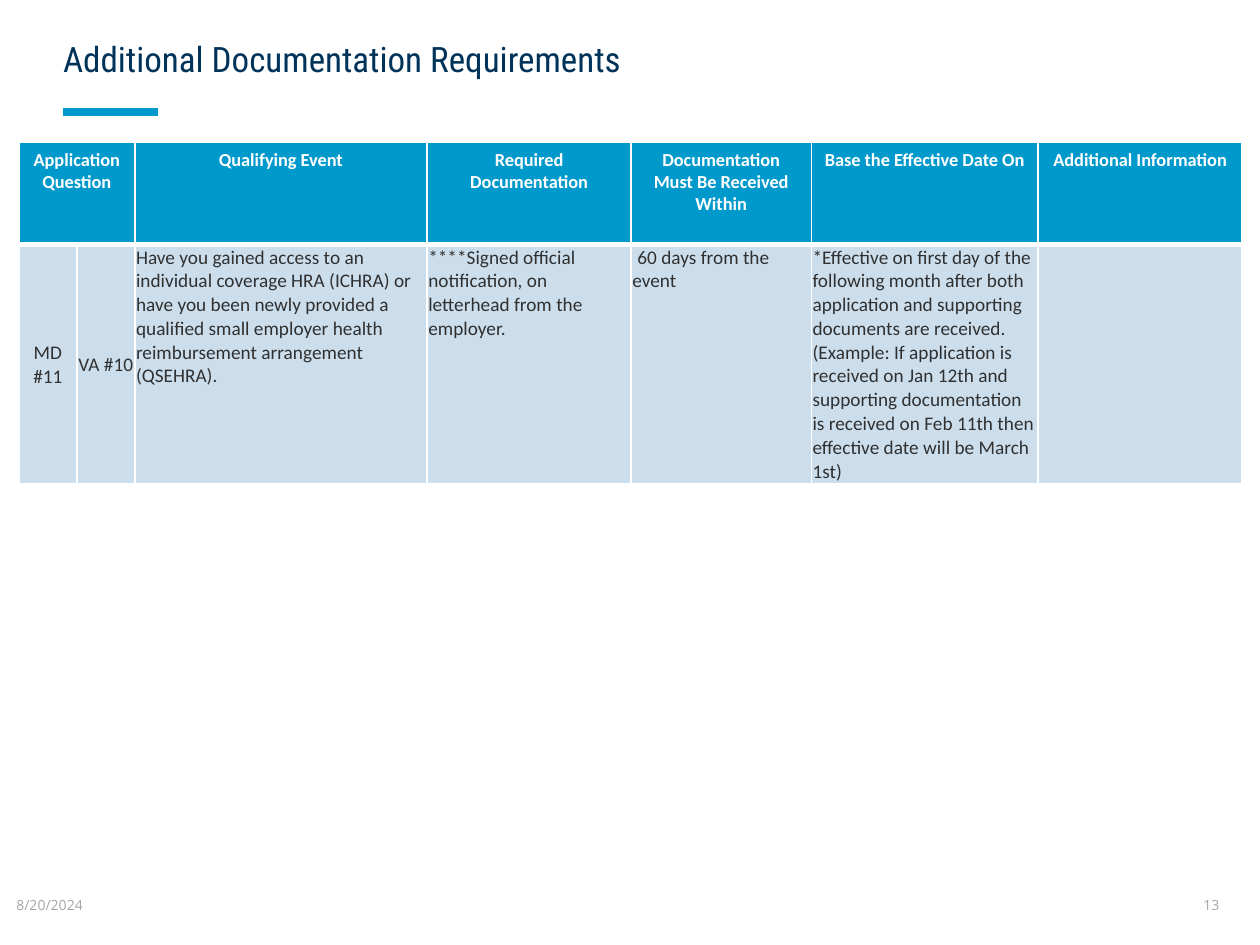
from lxml import etree
from pptx import Presentation
from pptx.dml.color import RGBColor
from pptx.enum.shapes import MSO_CONNECTOR
from pptx.enum.text import MSO_ANCHOR, PP_ALIGN
from pptx.oxml.ns import qn
from pptx.util import Inches, Pt

LEFT, CENTER = PP_ALIGN.LEFT, PP_ALIGN.CENTER
TOP, MIDDLE = MSO_ANCHOR.TOP, MSO_ANCHOR.MIDDLE
STRAIGHT = MSO_CONNECTOR.STRAIGHT

BLUE, PALE, WHITE = "0099CC", "CCDEEC", "FFFFFF"
COLUMN_WIDTHS = [0.46, 0.46, 2.32, 1.62, 1.43, 1.8, 1.62]
ROW_HEIGHTS = [0.81, 1.88]
HEADERS = ["Application Question", "", "Qualifying Event", "Required Documentation",
           "Documentation Must Be Received Within", "Base the Effective Date On",
           "Additional Information"]
REQUIREMENT = [
    "MD #11",
    "VA #10",
    "Have you gained access to an individual coverage HRA (ICHRA) or have you been newly "
    "provided a qualified small employer health reimbursement arrangement (QSEHRA).",
    "****Signed official notification, on letterhead from the employer.",
    "60 days from the event",
    "*Effective on first day of the following month after both application and supporting "
    "documents are received. (Example: If application is received on Jan 12th and supporting "
    "documentation is received on Feb 11th then effective date will be March 1st)",
    "",
]


def rgb(color):
    return RGBColor.from_string(color)


def write(tf, text, size=11, font="Calibri", color="303030", bold=False, align=LEFT,
          spacing=None, indent=0):
    p = tf.paragraphs[0]
    p.alignment = align
    if spacing:
        p.line_spacing = spacing
    if indent:
        p._p.get_or_add_pPr().set("indent", str(Inches(indent)))
    r = p.add_run()
    r.text = text
    r.font.size, r.font.name, r.font.bold = Pt(size), font, bold
    r.font.color.rgb = rgb(color)


def set_margins(target, left, top, right, bottom):
    """Set the inner margins, in inches, of a text frame or table cell."""
    target.margin_left, target.margin_top = Inches(left), Inches(top)
    target.margin_right, target.margin_bottom = Inches(right), Inches(bottom)


def set_borders(cell, bottom=1):
    tcPr = cell._tc.get_or_add_tcPr()
    widths = {"a:lnL": 1, "a:lnR": 1, "a:lnT": 1, "a:lnB": bottom}
    for i, (tag, width) in enumerate(widths.items()):
        ln = etree.Element(qn(tag), w=str(Pt(width)))
        fill = etree.SubElement(ln, qn("a:solidFill"))
        etree.SubElement(fill, qn("a:srgbClr"), val=WHITE)
        tcPr.insert(i, ln)


def add_heading(slide, left, top, width, height):
    title = slide.shapes.title
    title.left, title.top = Inches(left), Inches(top)
    title.width, title.height = Inches(width), Inches(height)
    tf = title.text_frame
    tf.word_wrap = True
    tf.vertical_anchor = MIDDLE
    set_margins(tf, 0, 0.3, 0, 0.2)
    write(tf, "Additional Documentation Requirements", size=20, font="Roboto Condensed",
          color="003359", spacing=0.9)

    y = Inches(top + height + 0.02)
    accent = slide.shapes.add_connector(STRAIGHT, Inches(left), y, Inches(left + 0.75), y)
    accent.line.color.rgb = rgb(BLUE)
    accent.line.width = Pt(4.5)
    etree.SubElement(accent._element.spPr, qn("a:effectLst"))


def add_requirements_table(slide, left, top):
    table = slide.shapes.add_table(
        2, len(COLUMN_WIDTHS), Inches(left), Inches(top),
        Inches(sum(COLUMN_WIDTHS)), Inches(sum(ROW_HEIGHTS))).table
    for column, width in zip(table.columns, COLUMN_WIDTHS):
        column.width = Inches(width)
    for row, height in zip(table.rows, ROW_HEIGHTS):
        row.height = Inches(height)
    table.cell(0, 0).merge(table.cell(0, 1))

    for i, texts in enumerate([HEADERS, REQUIREMENT]):
        header = i == 0
        for j, text in enumerate(texts):
            cell = table.cell(i, j)
            cell.fill.solid()
            cell.fill.fore_color.rgb = rgb(BLUE if header else PALE)
            set_borders(cell, bottom=3 if header else 1)
            question = not header and j < 2
            cell.vertical_anchor = MIDDLE if question else TOP
            if not header:
                set_margins(cell, 0.01, 0.01, 0.01, 0)
            if not text:
                continue
            if header:
                write(cell.text_frame, text, size=10.5, color=WHITE, bold=True, align=CENTER)
            else:
                write(cell.text_frame, text, align=CENTER if question else LEFT,
                      indent=0.04 if j == 4 else 0)


def add_footer_text(slide, text, left, top, width, height, wrap):
    tf = slide.shapes.add_textbox(Inches(left), Inches(top), Inches(width),
                                  Inches(height)).text_frame
    tf.word_wrap = wrap
    tf.vertical_anchor = MIDDLE
    set_margins(tf, 0, 0.05, 0, 0.05)
    write(tf, text, size=8, font="Open Sans", color="A6A6A6")


def main():
    prs = Presentation()
    prs.slide_width, prs.slide_height = Inches(10), Inches(7.5)
    slide = prs.slides.add_slide(prs.slide_layouts[5])
    add_heading(slide, 0.5, 0, 6.75, 0.87)
    add_requirements_table(slide, 0.15, 1.13)
    add_footer_text(slide, "8/20/2024", 0.13, 6.98, 0.73, 0.4, wrap=False)
    add_footer_text(slide, "13", 9.55, 6.98, 0.27, 0.4, wrap=True)
    prs.save("out.pptx")


if __name__ == "__main__":
    main()
